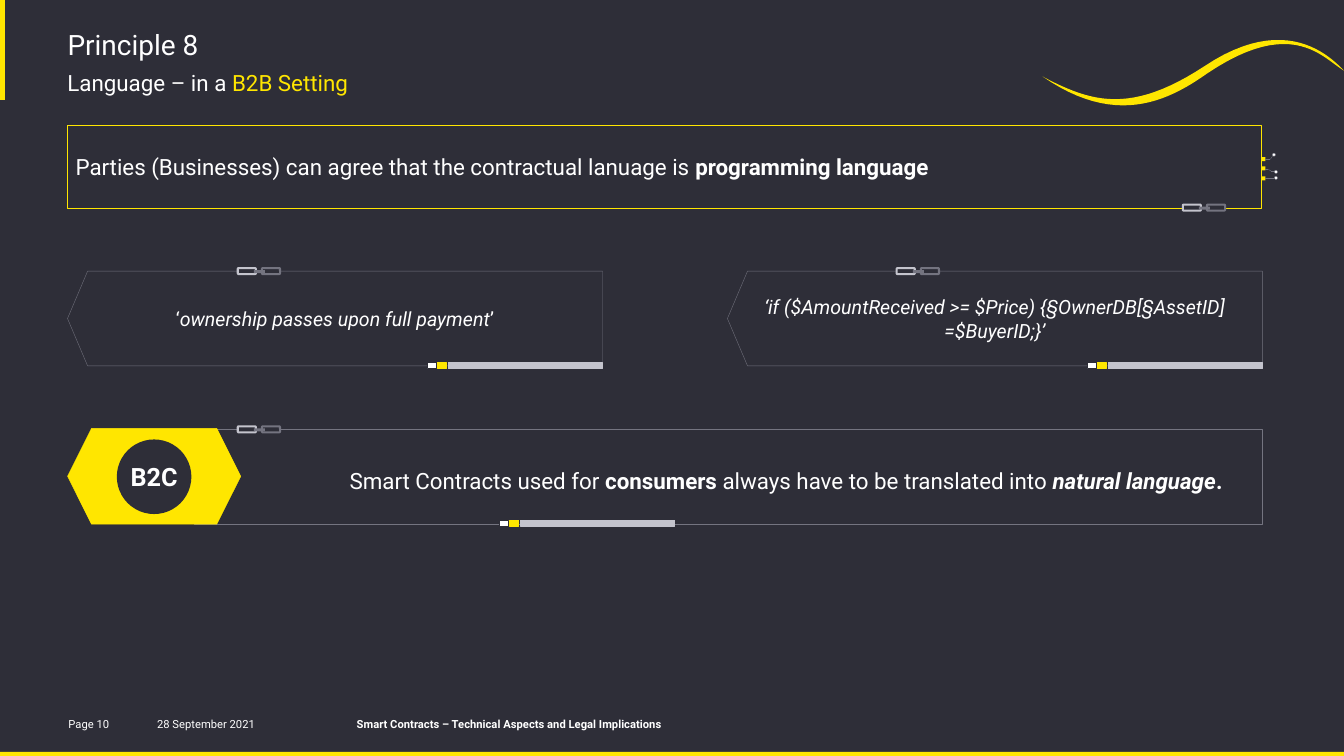
from lxml import etree
from pptx import Presentation
from pptx.dml.color import RGBColor
from pptx.enum.shapes import MSO_CONNECTOR, MSO_SHAPE
from pptx.enum.text import MSO_ANCHOR, MSO_AUTO_SIZE, PP_ALIGN
from pptx.oxml.ns import qn
from pptx.util import Pt

PX = 9144  # 100 px to the inch
DARK = RGBColor(0x2E, 0x2E, 0x38)
YELLOW = RGBColor(0xFF, 0xE6, 0x00)
WHITE = RGBColor(0xFF, 0xFF, 0xFF)
GREY = RGBColor(0x74, 0x74, 0x80)
SILVER = RGBColor(0xC4, 0xC4, 0xCD)
RECT, ROUNDED, OVAL = MSO_SHAPE.RECTANGLE, MSO_SHAPE.ROUNDED_RECTANGLE, MSO_SHAPE.OVAL
LEFT, CENTER = PP_ALIGN.LEFT, PP_ALIGN.CENTER
TOP, MIDDLE = MSO_ANCHOR.TOP, MSO_ANCHOR.MIDDLE

prs = Presentation()
prs.slide_width, prs.slide_height = 1334 * PX, 750 * PX
slide = prs.slides.add_slide(prs.slide_layouts[5])
slide.background.fill.solid()
slide.background.fill.fore_color.rgb = DARK
shapes = slide.shapes


def add_block(kind, box, fill=None, line=None, width=0.25):
    block = shapes.add_shape(kind, *(n * PX for n in box))
    block.shadow.inherit = False
    if fill is None:
        block.fill.background()
    else:
        block.fill.solid()
        block.fill.fore_color.rgb = fill
    if line is None:
        block.line.fill.background()
    else:
        block.line.color.rgb = line
        block.line.width = Pt(width)
    return block


def write(shape, runs, size, align=LEFT, anchor=MIDDLE, insets=(0, 0, 0, 0)):
    """Fill a shape with runs of (text, style, colour); style holds b and/or i."""
    frame = shape.text_frame
    frame.word_wrap = True
    frame.auto_size = MSO_AUTO_SIZE.NONE
    frame.vertical_anchor = anchor
    (frame.margin_left, frame.margin_top,
     frame.margin_right, frame.margin_bottom) = (n * PX for n in insets)
    paragraph = frame.paragraphs[0]
    paragraph.alignment = align
    for text, style, colour in runs:
        run = paragraph.add_run()
        run.text = text
        font = run.font
        font.name, font.size = "Roboto", Pt(size)
        font.bold, font.italic = "b" in style, "i" in style
        font.color.rgb = colour


# Frame of the slide: yellow edges and the wave
add_block(RECT, (0, 746, 1334, 4), YELLOW)
add_block(RECT, (0, 0, 5, 99), YELLOW)

wave_start = (1035, 76)
wave_curves = [
    ((1084, 102), (1123, 113), (1195, 66)),
    ((1277, 11), (1321, 57), (1334, 70)),
    ((1314, 59), (1284, 15), (1198, 73)),
    ((1157, 102), (1106, 125), wave_start),
]
STEPS = 24
wave_points = [wave_start]
for control_1, control_2, end in wave_curves:
    corners = list(zip(wave_points[-1], control_1, control_2, end))
    for step in range(1, STEPS + 1):
        t = step / STEPS
        u = 1 - t
        wave_points.append(tuple(
            u**3 * a + 3 * u**2 * t * b + 3 * u * t**2 * c + t**3 * d
            for a, b, c, d in corners))
wave_emu = [(x * PX, y * PX) for x, y in wave_points]
builder = shapes.build_freeform(*wave_emu[0])
builder.add_line_segments(wave_emu[1:])
wave = builder.convert_to_shape()
wave.shadow.inherit = False
wave.fill.solid()
wave.fill.fore_color.rgb = YELLOW
wave.line.fill.background()

# Headings and footer
title = shapes.title
title.left, title.top, title.width, title.height = (n * PX for n in (67, 27, 947, 42))
write(title, [("Principle 8", "", WHITE)], 20, anchor=TOP)

captions = [
    ((67, 69, 947, 29), 16, TOP,
     [("Language – in a ", "", WHITE), ("B2B Setting", "", YELLOW)]),
    ((68, 708, 73, 20), 8, MIDDLE, [("Page 10", "", WHITE)]),
    ((156, 708, 130, 20), 8, MIDDLE, [("28 September 2021", "", WHITE)]),
    ((354, 708, 338, 20), 8, MIDDLE,
     [("Smart Contracts – Technical Aspects and Legal Implications", "b", WHITE)]),
]
for box, size, anchor, runs in captions:
    write(shapes.add_textbox(*(n * PX for n in box)), runs, size, anchor=anchor)

# B2B rule with its circuit
b2b_rule = add_block(RECT, (67, 124, 1185, 83), DARK, YELLOW, 0.5)
write(b2b_rule, [
    ("Parties (Businesses) can agree that the contractual lanuage is ", "", WHITE),
    ("programming language", "b", WHITE),
], 16, insets=(8, 8, 8, 8))

circuits = [
    (156, [(1256, 158), (1261, 158), (1263, 155)], (1263, 152)),
    (165, [(1256, 168), (1259, 168), (1262, 170), (1267, 170)], (1265, 169)),
    (175, [(1256, 177), (1265, 177)], (1265, 175)),
]
for pin_top, track, node in circuits:
    add_block(RECT, (1252, pin_top, 4, 4), YELLOW)
    for start, end in zip(track, track[1:]):
        wire = shapes.add_connector(
            MSO_CONNECTOR.STRAIGHT, *(n * PX for n in start + end))
        wire.line.color.rgb = GREY
        wire.line.width = Pt(0.25)
        etree.SubElement(wire._element.spPr, qn("a:effectLst"))
    add_block(OVAL, (*node, 3, 3), WHITE, GREY)

# Natural language beside code
examples = [
    (67, [("‘", "", WHITE), ("ownership passes upon full payment", "i", WHITE),
          ("’", "", WHITE)]),
    (722, [("‘if ($AmountReceived >= $Price) {§OwnerDB[§AssetID] =$BuyerID;}’",
            "i", WHITE)]),
]
for left, runs in examples:
    builder = shapes.build_freeform(left + 20, 269, scale=PX)
    builder.add_line_segments(
        [(left + 531, 269), (left + 531, 363), (left + 20, 363), (left, 316)])
    example = builder.convert_to_shape()
    example.shadow.inherit = False
    example.fill.background()
    example.line.color.rgb = GREY
    example.line.width = Pt(0.25)
    write(example, runs, 14, CENTER, insets=(10, 5, 10, 5))

# B2C rule
b2c_rule = add_block(RECT, (193, 426, 1060, 94), None, GREY)
write(b2c_rule, [
    ("Smart Contracts used for ", "", WHITE),
    ("consumers", "b", WHITE),
    (" always have to be translated into ", "", WHITE),
    ("natural language", "bi", WHITE),
    (".", "b", WHITE),
], 16, insets=(154, 7, 0, 0))
add_block(MSO_SHAPE.HEXAGON, (67, 425, 172, 95), YELLOW, YELLOW)
b2c_badge = add_block(OVAL, (116, 436, 74, 74), DARK)
write(b2c_badge, [("B2C", "b", WHITE)], 18, CENTER)

# Progress bars and chain links on the borders
for left, top in [(445, 360), (1100, 360), (517, 516)]:
    add_block(RECT, (left, top, 153, 6), SILVER, SILVER, 0.75)
    add_block(RECT, (left - 11, top, 9, 6), YELLOW, YELLOW, 0.75)
    add_block(RECT, (left - 21, top, 9, 6), WHITE, DARK, 0.75)

for left, top in [(1174, 203), (236, 266), (890, 266), (236, 423)]:
    add_block(ROUNDED, (left + 24, top, 18, 6), DARK, GREY, 1.5)
    add_block(ROUNDED, (left, top, 18, 6), DARK, SILVER, 1.5)
    add_block(RECT, (left + 16, top + 2, 11, 3), GREY)

prs.save("out.pptx")
